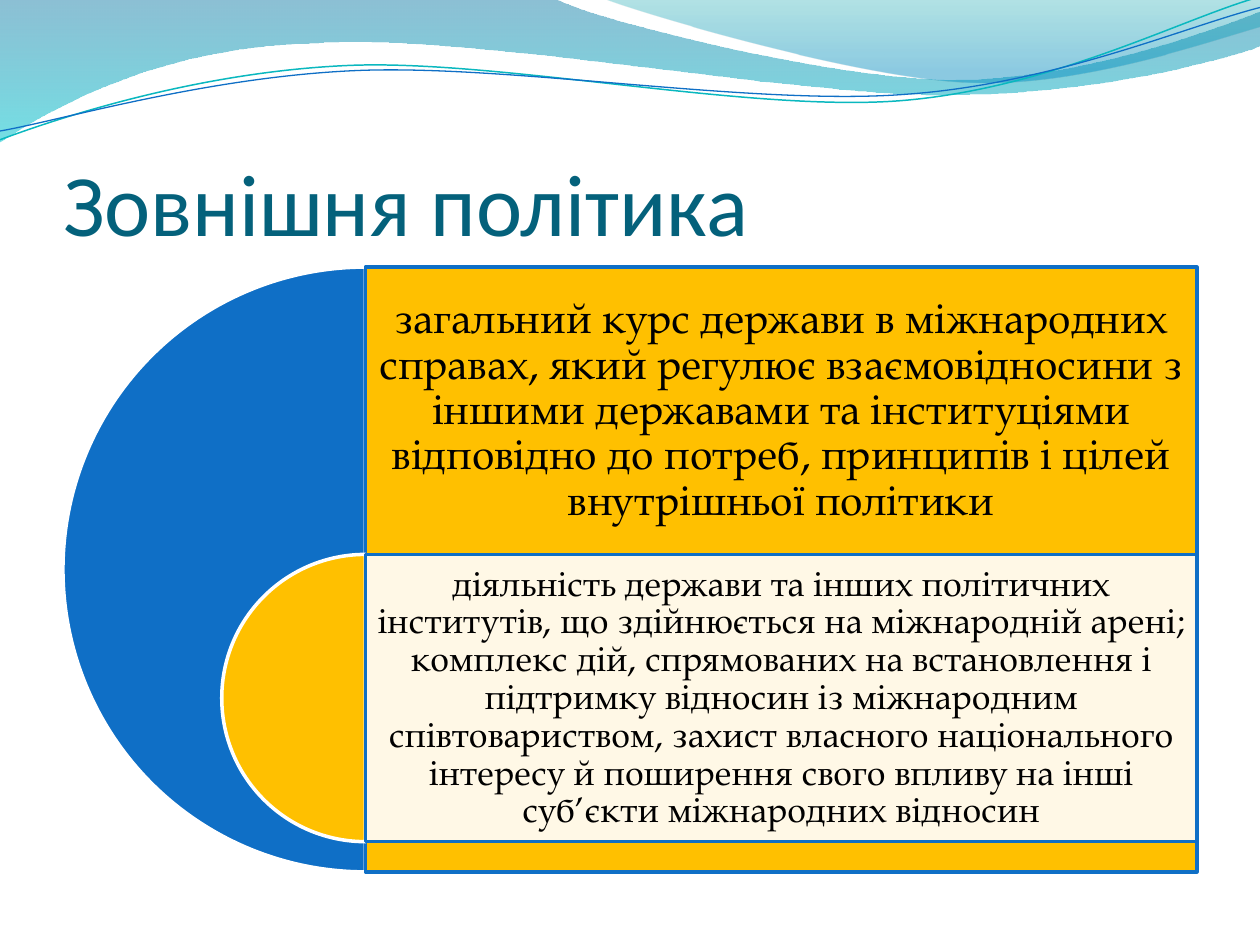
import math
from lxml import etree
from pptx import Presentation, util as u
from pptx.dml.color import RGBColor
from pptx.enum import shapes, text
from pptx.oxml.ns import qn

UNITS = 1000  # outline units per inch


def colour(fmt, code, alpha=None):
    fmt.rgb = RGBColor.from_string(code)
    if alpha is not None:
        etree.SubElement(fmt._color._xClr, qn("a:alpha"), val=str(alpha * 1000))


def write(tf, words, size=20, font="TeX Gyre Pagella", code="000000", inset=(0.1,) * 4,
          anchor=text.MSO_ANCHOR.MIDDLE, align=text.PP_ALIGN.CENTER, spacing=0.9, after=0.35):
    tf.word_wrap = True
    tf.auto_size = text.MSO_AUTO_SIZE.NONE
    tf.vertical_anchor = anchor
    tf.margin_left, tf.margin_top, tf.margin_right, tf.margin_bottom = map(u.Inches, inset)
    p = tf.paragraphs[0]
    p.alignment, p.line_spacing, p.space_after = align, spacing, u.Pt(after * size)
    r = p.add_run()
    r.text = words
    r.font.size, r.font.name = u.Pt(size), font
    colour(r.font.color, code)


prs = Presentation()
W, H = 10, 7.5
prs.slide_width, prs.slide_height = u.Inches(W), u.Inches(H)
s = prs.slides.add_slide(prs.slide_layouts[5])

# Waves: two numbers are a line end, six numbers are a curve
waves = [
    dict(d=[(0, 0), (4.4, -0.01), (4.76, 0.17, 6.64, 0.63, 7.58, 0.63),
            (8.53, 0.63, 9.58, 0.26, 10, 0.09), (10.01, 0.36),
            (9.83, 0.44, 8.7, 0.76, 7.46, 0.75), (6.22, 0.75, 3.82, 0.28, 2.57, 0.34),
            (1.29, 0.36, 0.46, 0.83, -0.01, 1.13), (0, 0)],
         stops=[(0, "0074A1", 45), (100, "00C6CF", 55)]),
    dict(d=[(4.79, -0.01), (5.09, 0.11, 6.82, 0.62, 7.69, 0.65),
            (8.56, 0.69, 9.61, 0.32, 10, 0.21), (10, 0), (4.79, -0.01)],
         stops=[(0, "00A1A9", 30), (80, "008BBF", 45)]),
    dict(d=[(0, 1.11), (0.48, 0.93, 1.58, 0.57, 2.77, 0.52), (3.95, 0.47, 5.93, 0.89, 7.13, 0.8),
            (8.33, 0.71, 9.38, 0.15, 9.98, -0.02)],
         line=("0AB8BF", 0.85), centre=(4.99, 0.57)),
    dict(d=[(0, 1.04), (0.47, 0.96, 1.64, 0.61, 2.83, 0.56), (4.03, 0.51, 5.97, 0.84, 7.17, 0.75),
            (8.36, 0.67, 9.41, 0.21, 10, 0.06)],
         line=("0F6FC6", 0.75), centre=(5, 0.59)),
]
TILT = -2.7  # degrees, for the two lines
cos, sin = math.cos(math.radians(TILT)), math.sin(math.radians(TILT))
for wave in waves:
    pts = [seg[i:i + 2] for seg in wave["d"] for i in range(0, len(seg), 2)]
    if "centre" in wave:  # level the points, the shape's rotation tilts them back
        cx, cy = wave["centre"]
        pts = [(cx + (x - cx) * cos + (y - cy) * sin, cy - (x - cx) * sin + (y - cy) * cos)
               for x, y in pts]
    pts = [(round(x * UNITS), round(y * UNITS)) for x, y in pts]
    fb = s.shapes.build_freeform(*pts[0], scale=u.Inches(1) / UNITS)
    fb.add_line_segments(pts[1:], close="stops" in wave)
    sp = fb.convert_to_shape()
    sp.shadow.inherit = False
    steps = iter(list(sp._element.iter(qn("a:lnTo"))))
    for seg in wave["d"][1:]:  # join three points into one curve
        step = next(steps)
        if len(seg) == 6:
            step.tag = qn("a:cubicBezTo")
            for _ in range(2):
                extra = next(steps)
                step.append(extra[0])
                extra.getparent().remove(extra)
    if "stops" in wave:
        sp.line.fill.background()
        sp.fill.gradient()
        sp.fill.gradient_angle = 270
        for stop, (pos, code, alpha) in zip(sp.fill.gradient_stops, wave["stops"]):
            stop.position = pos / 100
            colour(stop.color, code, alpha)
    else:
        sp.fill.background()
        sp.rotation = TILT
        code, width = wave["line"]
        colour(sp.line.color, code)
        sp.line.width = u.Pt(width)

# Title, in front of the waves
title = s.shapes.title
s.shapes._spTree.append(title._element)
title.left, title.top, title.width, title.height = map(u.Inches, (0.05 * W, 0.77, 0.9 * W, H / 6))
write(title.text_frame, "Зовнішня політика", size=50, font="Calibri", code="04617B",
      inset=(0, 0.05, 0, 0), anchor=text.MSO_ANCHOR.BOTTOM, align=text.PP_ALIGN.LEFT,
      spacing=1, after=0)

# Nested half discs, each with a panel that starts at its centre
TOP, DISC = 2.12, 0.64 * H
BAND = 0.475 * DISC
MID = 0.05 * W + DISC / 2
PANEL = 0.95 * W - MID
levels = [
    (TOP, DISC, "0F6FC6", "FFC000", None, 24, 0.1,
     "загальний курс держави в міжнародних справах, який регулює взаємовідносини з іншими "
     "державами та інституціями відповідно до потреб, принципів і цілей внутрішньої політики"),
    (TOP + BAND, BAND, "FFC000", "FFFFFF", 90, 20, 0.08,
     "діяльність держави та інших політичних інститутів, що здійнюється на міжнародній арені; "
     "комплекс дій, спрямованих на встановлення і підтримку відносин із міжнародним "
     "співтовариством, захист власного національного інтересу й поширення свого впливу на інші "
     "суб’єкти міжнародних відносин"),
]
for top, size, disc, panel, alpha, pt, pad, words in levels:
    for kind, left, width, fill, clear, edge in (
            (shapes.MSO_SHAPE.PIE, MID - size / 2, size, disc, None, "FFFFFF"),
            (shapes.MSO_SHAPE.RECTANGLE, MID, PANEL, panel, alpha, "0F6FC6")):
        sp = s.shapes.add_shape(kind, *map(u.Inches, (left, top, width, size)))
        sp.shadow.inherit = False
        sp.fill.solid()
        colour(sp.fill.fore_color, fill, clear)
        colour(sp.line.color, edge)
        sp.line.width = u.Pt(2)
        if kind == shapes.MSO_SHAPE.PIE:
            sp.adjustments[0], sp.adjustments[1] = 54, 162  # from 90 to 270 degrees
    box = s.shapes.add_textbox(*map(u.Inches, (MID, top, PANEL, BAND)))
    write(box.text_frame, words, size=pt, inset=(pad,) * 4)

prs.save("out.pptx")
